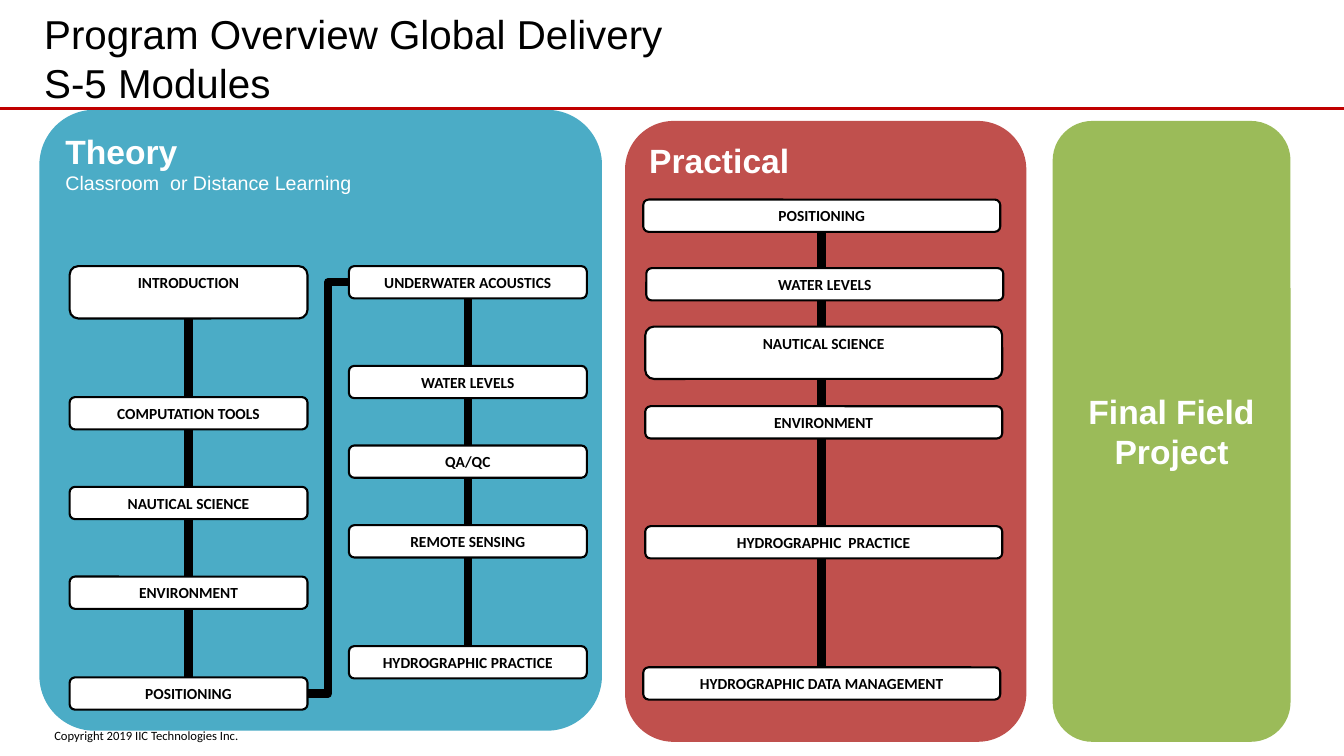
from pptx import Presentation
from pptx.dml.color import RGBColor
from pptx.enum.shapes import MSO_CONNECTOR, MSO_SHAPE
from pptx.enum.text import MSO_ANCHOR, PP_ALIGN
from pptx.oxml.ns import qn
from pptx.util import Inches, Pt
from lxml import etree

ROUNDED = MSO_SHAPE.ROUNDED_RECTANGLE
STRAIGHT, ELBOW = MSO_CONNECTOR.STRAIGHT, MSO_CONNECTOR.ELBOW
TOP, MIDDLE = MSO_ANCHOR.TOP, MSO_ANCHOR.MIDDLE
LEFT, CENTER = PP_ALIGN.LEFT, PP_ALIGN.CENTER

COLORS = {
    "black": "000000", "white": "FFFFFF", "rule": "C00000",
    "theory": "4BACC6", "practical": "C0504D", "project": "9BBB59",
}

deck = Presentation()
deck.slide_width, deck.slide_height = Inches(13.33), Inches(7.5)
page = deck.slides.add_slide(deck.slide_layouts[6])


def place(*percents):
    """Turn alternating percentages of the slide's width and height into lengths."""
    sides = (deck.slide_width, deck.slide_height)
    return [round(sides[i % 2] * share / 100) for i, share in enumerate(percents)]


def write(box, text, size, font="Arial", color="white", bold=False,
          align=LEFT, anchor=TOP, wrap=True):
    """Fill the box's empty first paragraph, or add a paragraph after it."""
    frame = box.text_frame
    frame.word_wrap, frame.vertical_anchor = wrap, anchor
    para = frame.paragraphs[0] if not frame.text else frame.add_paragraph()
    para.text, para.alignment = text, align
    for span in para.runs:
        span.font.name, span.font.size, span.font.bold = font, Pt(size), bold
        span.font.color.rgb = RGBColor.from_string(COLORS[color])


# Panels: left, top, width, corner, colour
PANEL_HEIGHT = 82.13
panels = {}
for name, left, top, width, corner in [
    ("theory", 2.93, 14.53, 41.86, 0.098),
    ("practical", 46.51, 16, 29.86, 0.121),
    ("project", 78.32, 16, 17.7, 0.1667),
]:
    panel = page.shapes.add_shape(ROUNDED, *place(left, top, width, PANEL_HEIGHT))
    panel.shadow.inherit = False
    panel.adjustments[0] = corner
    panel.fill.solid()
    panel.fill.fore_color.rgb = RGBColor.from_string(COLORS[name])
    panel.line.fill.background()
    panels[name] = panel

write(panels["theory"], "Theory", 24, bold=True)
write(panels["theory"], "Classroom  or Distance Learning", 14)
write(panels["practical"], "Practical", 24, bold=True)
write(panels["project"], "Final Field Project", 24, bold=True, align=CENTER, anchor=MIDDLE)

title = page.shapes.add_textbox(*place(2.55, 3.2, 59.49, 8.93))
write(title, "Program Overview Global Delivery\vS-5 Modules", 28.8, color="black", anchor=MIDDLE)
footer = page.shapes.add_textbox(*place(3.3, 95.6, 15.38, 3.33))
write(footer, "Copyright 2019 IIC Technologies Inc.", 9, font="Calibri", color="black", wrap=False)

# Module columns: left, width, and modules as (name, top, shift to the right)
LOW, TALL = 4.27, 6.93
THEORY_LEFT, THEORY_RIGHT, THEORY_WIDTH = 5.18, 25.96, 17.7
FIRST_TOP, LAST_TOP = 35.2, 89.6
columns = [
    (THEORY_LEFT, THEORY_WIDTH, [
        ("INTRODUCTION", FIRST_TOP, 0, TALL),
        ("COMPUTATION TOOLS", 52.53, 0, LOW),
        ("NAUTICAL SCIENCE", 64.4, 0, LOW),
        ("ENVIRONMENT", 76.27, 0, LOW),
        ("POSITIONING", LAST_TOP, 0, LOW),
    ]),
    (THEORY_RIGHT, THEORY_WIDTH, [
        ("UNDERWATER ACOUSTICS", FIRST_TOP, 0, LOW),
        ("WATER LEVELS", 48.4, 0, LOW),
        ("QA/QC", 58.93, 0, LOW),
        ("REMOTE SENSING", 69.47, 0, LOW),
        ("HYDROGRAPHIC PRACTICE", 85.47, 0, LOW),
    ]),
    (47.86, 26.56, [
        ("POSITIONING", 26.4, 0, LOW),
        ("WATER LEVELS", 35.47, 0.23, LOW),
        ("NAUTICAL SCIENCE", 43.2, 0.15, TALL),
        ("ENVIRONMENT", 53.73, 0.15, LOW),
        ("HYDROGRAPHIC  PRACTICE", 69.6, 0.15, LOW),
        ("HYDROGRAPHIC DATA MANAGEMENT", 88.27, 0, LOW),
    ]),
]

# Lines: the rule, the turn between the theory columns, and a spine per column
lines = [
    (STRAIGHT, (0, 14.4, 100, 14.4), "rule", 2.25),
    (ELBOW, (THEORY_LEFT + THEORY_WIDTH, LAST_TOP + LOW / 2,
             THEORY_RIGHT, FIRST_TOP + LOW / 2), "black", 6),
]
for left, width, modules in columns:
    middle = left + width / 2
    start = modules[0][1] + modules[0][3]
    lines.append((STRAIGHT, (middle, start, middle, modules[-1][1]), "black", 6))

for kind, ends, color, weight in lines:
    line = page.shapes.add_connector(kind, *place(*ends))
    line.line.color.rgb = RGBColor.from_string(COLORS[color])
    line.line.width = Pt(weight)
    etree.SubElement(line._element.spPr, qn("a:effectLst"))

for left, width, modules in columns:
    for name, top, shift, height in modules:
        box = page.shapes.add_shape(ROUNDED, *place(left + shift, top, width, height))
        box.shadow.inherit = False
        box.fill.solid()
        box.fill.fore_color.rgb = RGBColor.from_string(COLORS["white"])
        box.line.color.rgb = RGBColor.from_string(COLORS["black"])
        box.line.width = Pt(1.5)
        write(box, name, 11, font="Calibri", color="black", bold=True,
              align=CENTER, anchor=TOP if height == TALL else MIDDLE)

deck.save("out.pptx")
